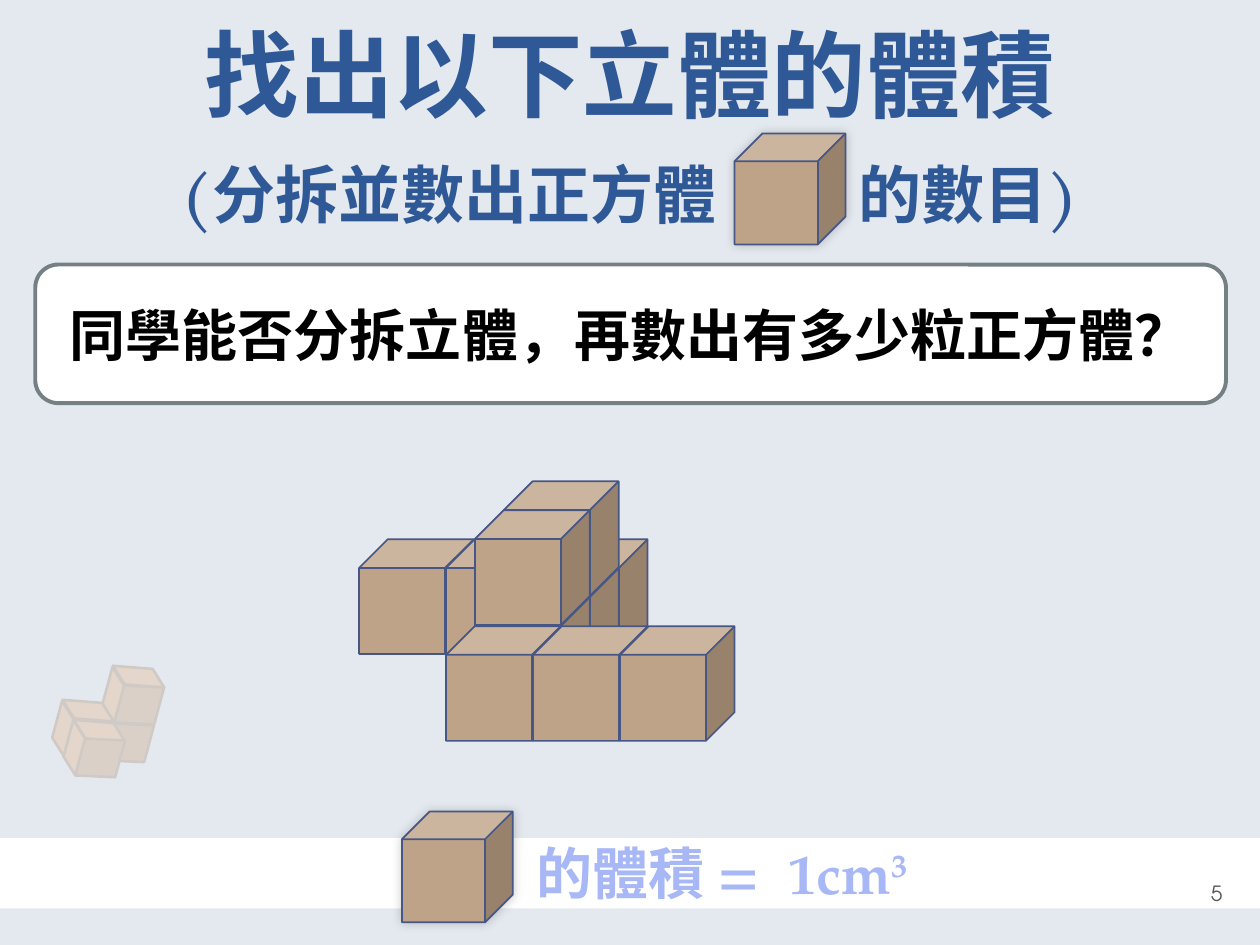
"""Build a slide on finding a solid's volume by counting unit cubes."""
from dataclasses import dataclass

from lxml import etree
from pptx import Presentation
from pptx import util as u
from pptx.dml.color import RGBColor
from pptx.enum import shapes, text
from pptx.oxml.ns import qn


@dataclass(frozen=True)
class Theme:
    backdrop: str = "E4E9EF"
    panel: str = "FFFFFF"
    panel_edge: str = "758085"
    cube: str = "BEA388"
    cube_edge: str = "475785"
    lid: str = "E68422"
    face: str = "B26314"
    ornament_edge: str = "77420D"
    heading: str = "2F5897"
    question: str = "000000"
    formula: str = "A8B8F6"
    footer: str = "595959"
    serif: str = "TeX Gyre Pagella"
    sans: str = "Arial"
    number_font: str = "TeX Gyre Adventor"
    title_size: int = 54
    subtitle_size: int = 36
    body_size: int = 32
    footer_size: int = 12


class Painter:
    def __init__(self, slide, theme):
        self.slide = slide
        self.theme = theme

    def shape(self, kind, box, fill, edge=None, width=1, alpha=None):
        figure = self.slide.shapes.add_shape(kind, *map(u.Inches, box))
        figure.shadow.inherit = False
        figure.fill.solid()
        figure.fill.fore_color.rgb = RGBColor.from_string(fill)
        if alpha:
            tint = figure._element.spPr.find(qn("a:solidFill"))[0]
            etree.SubElement(tint, qn("a:alpha"), val=str(alpha * 1000))
        if edge:
            figure.line.color.rgb = RGBColor.from_string(edge)
            figure.line.width = u.Pt(width)
        else:
            figure.line.fill.background()
        return figure

    def band(self, box, alpha=None):
        self.shape(shapes.MSO_SHAPE.RECTANGLE, box, self.theme.backdrop, alpha=alpha)

    def cube(self, left, top, side, glow=False):
        block = self.shape(shapes.MSO_SHAPE.CUBE, (left, top, side, side),
                           self.theme.cube, self.theme.cube_edge)
        if glow:
            effects = block._element.spPr.find(qn("a:effectLst"))
            shadow = etree.SubElement(effects, qn("a:outerShdw"), blurRad=str(u.Pt(6)),
                                      dist="0", dir="18900000", rotWithShape="0")
            tint = etree.SubElement(shadow, qn("a:srgbClr"), val="000000")
            etree.SubElement(tint, qn("a:alpha"), val="20000")

    def facet(self, left, top, size, turn, flips, skew, fill):
        side = self.shape(shapes.MSO_SHAPE.PARALLELOGRAM, (left, top, *size),
                          fill, self.theme.ornament_edge, 1.5)
        side.adjustments[0] = skew
        side.rotation = turn
        for flip in flips:
            side._element.spPr.find(qn("a:xfrm")).set(flip, "1")

    def fill_text(self, frame, pieces, font, color, bold=True, align=None, spacing=None,
                  anchor=text.MSO_ANCHOR.MIDDLE, insets=None):
        frame.word_wrap = True
        frame.vertical_anchor = anchor
        if insets:
            (frame.margin_left, frame.margin_top,
             frame.margin_right, frame.margin_bottom) = map(u.Inches, insets)
        line = frame.paragraphs[0]
        line.alignment = align
        line.line_spacing = spacing
        for words, size, extra in pieces:
            if words == "\n":
                line.add_line_break()
                continue
            run = line.add_run()
            run.text = words
            run.font.size = u.Pt(size)
            run.font.name = font
            run.font.bold = bold
            run.font.color.rgb = RGBColor.from_string(color)
            for key, value in extra.items():
                run._r.get_or_add_rPr().set(key, str(value))

    def label(self, box, pieces, font, color, **style):
        frame = self.slide.shapes.add_textbox(*map(u.Inches, box)).text_frame
        self.fill_text(frame, pieces, font, color, **style)

    def panel(self, box, pieces, font, color, **style):
        board = self.shape(shapes.MSO_SHAPE.ROUNDED_RECTANGLE, box,
                           self.theme.panel, self.theme.panel_edge, 2.25)
        self.fill_text(board.text_frame, pieces, font, color, **style)


def draw_ornament(painter):
    theme = painter.theme
    left_side = ((0.42, 0.13), 105, ("flipH", "flipV"), 0.92, theme.lid)
    lid = ((0.42, 0.14), 184.5, ("flipV",), 0.74, theme.lid)
    front = ((0.37, 0.31), 105, ("flipH",), 0.22, theme.face)
    facets = [
        (0.29, 5.72, left_side), (0.49, 5.57, lid),
        (0.69, 5.45, left_side), (0.89, 5.3, lid),
        (0.84, 5.74, front), (0.58, 5.73, lid),
        (0.38, 5.87, left_side), (0.61, 5.86, front), (0.92, 5.44, front),
    ]
    for left, top, look in facets:
        painter.facet(left, top, *look)
    painter.band((0, 3.84, 1.5, 2.63), alpha=82)


def draw_solid(painter):
    edge, depth = 0.69, 0.23
    cells = [(-2, 3, 0), (-1, 3, 0), (0, 3, 0), (0, 2, 0), (0, 1, 0),
             (0, 2, 1), (0, 1, 1), (0, 0, 0), (1, 0, 0), (2, 0, 0)]
    for column, back, level in cells:
        painter.cube(3.54 + edge * column + depth * back,
                     4.97 - depth * back - edge * level, 0.91)


def main():
    theme = Theme()
    deck = Presentation()
    deck.slide_width, deck.slide_height = u.Inches(10), u.Inches(7.5)
    painter = Painter(deck.slides.add_slide(deck.slide_layouts[6]), theme)
    center = text.PP_ALIGN.CENTER

    painter.band((0, 7.21, 10, 0.29))
    painter.band((0, 0, 10, 6.65))
    draw_ornament(painter)
    painter.label((9.58, 6.89, 0.61, 0.4), [("5", theme.footer_size, {})],
                  theme.number_font, theme.footer, bold=False,
                  insets=(0.03, 0.05, 0.05, 0.05))
    draw_solid(painter)

    title = [("找出以下立體的體積", theme.title_size, {}), ("\n", 0, {}),
             ("(分拆並數出正方體", theme.subtitle_size, {}),
             ("　", theme.subtitle_size, {"spc": 4500}),
             ("的數目)", theme.subtitle_size, {})]
    painter.label((0.5, 0.13, 9, 1.75), title, theme.serif, theme.heading,
                  align=center, spacing=u.Pt(58), anchor=text.MSO_ANCHOR.BOTTOM)

    painter.cube(3.19, 6.44, 0.88, glow=True)
    formula = [("的體積 =", theme.body_size, {}), (" ", theme.body_size, {"spc": 800}),
               ("1cm", theme.body_size, {}), ("3", theme.body_size, {"baseline": 30000})]
    painter.label((4.25, 6.41, 3.24, 1.09), formula, theme.serif, theme.formula,
                  spacing=0.9, insets=(0.01,) * 4)
    painter.cube(5.83, 1.06, 0.88, glow=True)
    painter.panel((0.28, 2.1, 9.45, 1.1),
                  [("同學能否分拆立體，再數出有多少粒正方體？", theme.body_size, {})],
                  theme.sans, theme.question, align=center)
    deck.save("out.pptx")


if __name__ == "__main__":
    main()
